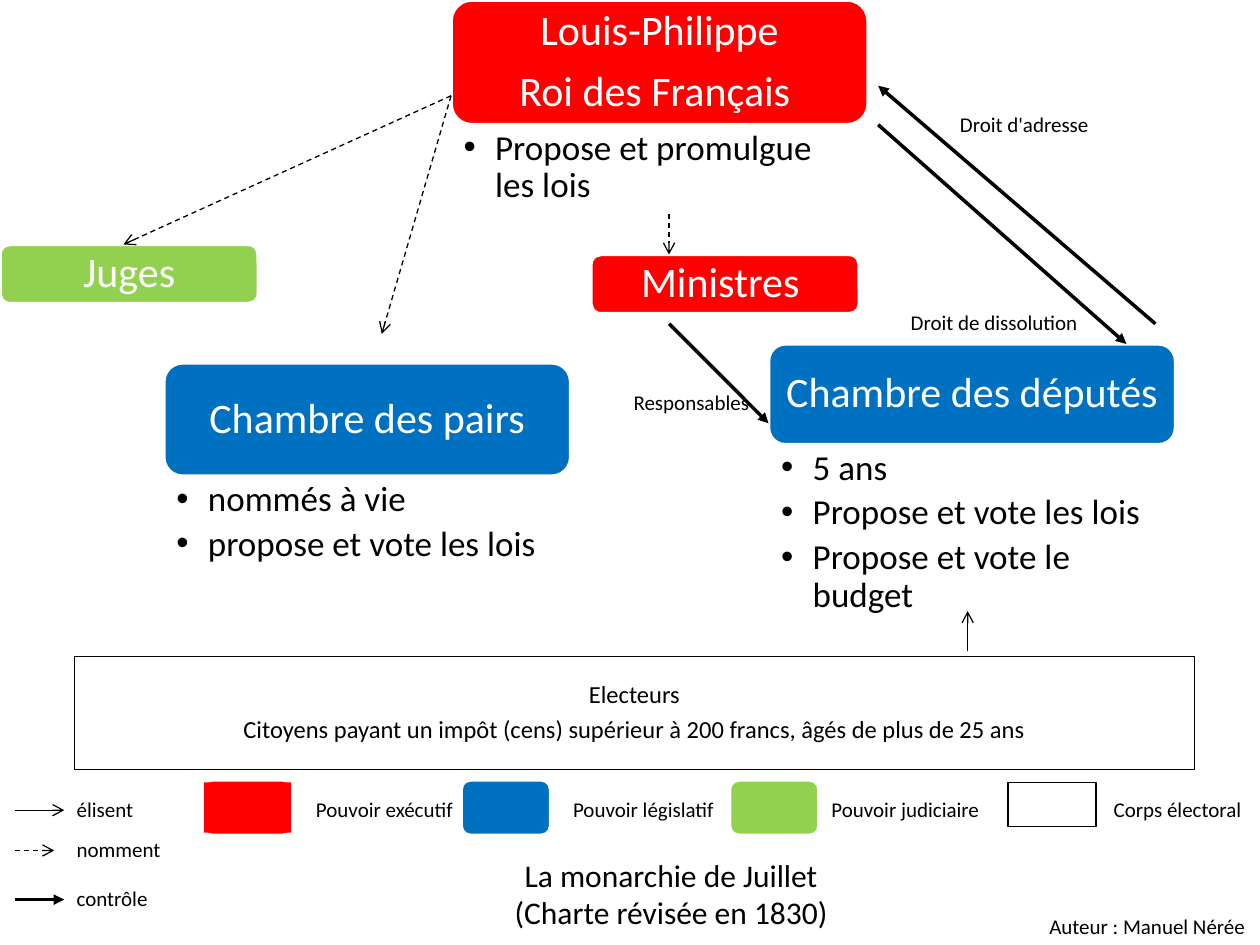
from lxml.etree import SubElement
from pptx import Presentation
from pptx.dml.color import RGBColor
from pptx.enum.dml import MSO_LINE
from pptx.enum.shapes import MSO_CONNECTOR, MSO_SHAPE
from pptx.enum.text import MSO_ANCHOR as Anchor, MSO_AUTO_SIZE as AutoSize, PP_ALIGN as Align
from pptx.oxml.ns import qn
from pptx.util import Emu, Pt

EMU_PER_PX = 9144
FONT = "Calibri"
RED = RGBColor(0xFF, 0x00, 0x00)
BLUE = RGBColor(0x00, 0x70, 0xC0)
GREEN = RGBColor(0x92, 0xD0, 0x50)
BLACK = RGBColor(0x00, 0x00, 0x00)
WHITE = RGBColor(0xFF, 0xFF, 0xFF)


def px(length):
    """Turn px, at 100 to the inch, into EMU."""
    return Emu(length * EMU_PER_PX)


def write(shape, lines, size, color, align, anchor, margins, spacing=1.0, after=0):
    """Fill a shape with one formatted paragraph per line and return the paragraphs."""
    frame = shape.text_frame
    frame.auto_size = AutoSize.NONE
    frame.word_wrap = True
    frame.vertical_anchor = anchor
    (frame.margin_left, frame.margin_top,
     frame.margin_right, frame.margin_bottom) = map(px, margins)
    for index, line in enumerate(lines):
        paragraph = frame.add_paragraph() if index else frame.paragraphs[0]
        paragraph.alignment = align
        paragraph.line_spacing = spacing
        paragraph.space_before = Pt(0)
        paragraph.space_after = Pt(after)
        run = paragraph.add_run()
        run.text = line
        run.font.name = FONT
        run.font.size = Pt(size)
        run.font.bold = False
        run.font.color.rgb = color
    return frame.paragraphs


def place(shape, box):
    """Move and size a placeholder to a box."""
    shape.left, shape.top, shape.width, shape.height = map(px, box)


def add_box(slide, box, fill=None, line=None, width=2, kind=MSO_SHAPE.ROUNDED_RECTANGLE):
    """Add a flat shape with optional fill and outline."""
    shape = slide.shapes.add_shape(kind, *map(px, box))
    shape.shadow.inherit = False
    if fill is None:
        shape.fill.background()
    else:
        shape.fill.solid()
        shape.fill.fore_color.rgb = fill
    if line is None:
        shape.line.fill.background()
    else:
        shape.line.color.rgb = line
        shape.line.width = Pt(width)
    return shape


def add_label(slide, left, top, width, text):
    """Add a one-line caption."""
    label = slide.shapes.add_textbox(*map(px, (left, top, width, 30)))
    write(label, [text], 12, BLACK, Align.LEFT, Anchor.TOP, (10, 5, 10, 5))
    label.text_frame.word_wrap = False


def add_arrow(slide, start, end, head="arrow", width=0.75, dashed=False):
    """Draw a straight arrow from start to end."""
    arrow = slide.shapes.add_connector(MSO_CONNECTOR.STRAIGHT, *map(px, start + end))
    arrow.line.color.rgb = BLACK
    arrow.line.width = Pt(width)
    if dashed:
        arrow.line.dash_style = MSO_LINE.DASH
    SubElement(arrow.line._get_or_add_ln(), qn("a:tailEnd"), type=head)
    SubElement(arrow._element.spPr, qn("a:effectLst"))


def elects(slide, start, end):
    """Draw the thin solid arrow of an election."""
    add_arrow(slide, start, end)


def appoints(slide, start, end):
    """Draw the dashed arrow of an appointment."""
    add_arrow(slide, start, end, dashed=True)


def controls(slide, start, end):
    """Draw the thick arrow of a control."""
    add_arrow(slide, start, end, "triangle", 2)


def add_power(slide, box, color, names):
    """Add the coloured box of an institution."""
    shape = add_box(slide, box, color, WHITE)
    write(shape, names, 24, WHITE, Align.CENTER, Anchor.MIDDLE, (10,) * 4, 0.9, 8.4)


def add_duties(placeholder, power_box, height, items):
    """Put a bulleted list right below the box of an institution."""
    left, top, width, power_height = power_box
    place(placeholder, (left, top + power_height + 1, width, height))
    for paragraph in write(placeholder, items, 20, BLACK, Align.LEFT, Anchor.TOP,
                           (10, 3, 16, 3), 0.9, 4):
        properties = paragraph._p.get_or_add_pPr()
        properties.set("marL", str(px(25)))
        properties.set("indent", str(px(-25)))
        SubElement(properties, qn("a:buFont"), typeface="Arial")
        SubElement(properties, qn("a:buChar"), char="•")


def add_electors(slide, box):
    """Add the framed box of the electorate."""
    frame = add_box(slide, box, line=BLACK, width=0.75, kind=MSO_SHAPE.RECTANGLE)
    lines = ["Electeurs",
             "Citoyens payant un impôt (cens) supérieur à 200 francs, âgés de plus de 25 ans"]
    write(frame, lines, 14, BLACK, Align.CENTER, Anchor.MIDDLE, (10,) * 4, 0.9, 4.9)


def add_arrow_legend(slide, left, top):
    """Explain the three kinds of arrow."""
    entries = [(elects, 0, 39, "élisent", 69),
               (appoints, 32, 31, "nomment", 94),
               (controls, 71, 39, "contrôle", 80)]
    for draw, offset, length, text, width in entries:
        y = top + offset
        draw(slide, (left, y), (left + length, y))
        add_label(slide, left + 39, y - 16, width, text)


def add_color_legend(slide, left, top):
    """Explain the colours of the powers and the frame of the electorate."""
    entries = [(0, RED, 80, 133, "Pouvoir exécutif"),
               (205, BLUE, 284, 140, "Pouvoir législatif"),
               (418, GREEN, 489, 141, "Pouvoir judiciaire")]
    for x, color, text_x, width, text in entries:
        add_box(slide, (left + x, top, 71, 44), color, WHITE)
        add_label(slide, left + text_x, top + 8, width, text)
    add_box(slide, (left + 1, top + 2, 69, 40), RED, kind=MSO_SHAPE.RECTANGLE)
    add_box(slide, (left + 639, top + 2, 70, 35), line=BLACK, width=0.75,
            kind=MSO_SHAPE.RECTANGLE)
    add_label(slide, left + 713, top + 8, 125, "Corps électoral")


def add_relations(slide):
    """Draw the arrows between institutions and their captions."""
    appoints(slide, (358, 76), (98, 194))
    appoints(slide, (358, 76), (303, 265))
    appoints(slide, (531, 170), (531, 202))
    controls(slide, (531, 257), (610, 336))
    controls(slide, (917, 257), (697, 68))
    controls(slide, (697, 99), (894, 273))
    elects(slide, (768, 517), (768, 485))
    add_label(slide, 493, 304, 119, "Responsables")
    add_label(slide, 713, 241, 157, "Droit de dissolution")
    add_label(slide, 752, 84, 126, "Droit d'adresse")


def main():
    """Build and save the slide."""
    presentation = Presentation()
    presentation.slide_width, presentation.slide_height = px(1000), px(750)
    slide = presentation.slides.add_slide(presentation.slide_layouts[4])
    title, king_list, peers_list, spare, deputies_list = slide.placeholders
    spare._element.getparent().remove(spare._element)

    place(title, (319, 674, 433, 70))
    write(title, ["La monarchie de Juillet ", "(Charte révisée en 1830) "], 18, BLACK,
          Align.CENTER, Anchor.TOP, (10, 5, 10, 5))

    king, peers, deputies = (358, 0, 331, 99), (130, 288, 323, 90), (610, 273, 323, 80)
    add_power(slide, king, RED, ["Louis-Philippe", "Roi des Français "])
    add_power(slide, peers, BLUE, ["Chambre des pairs"])
    add_power(slide, deputies, BLUE, ["Chambre des députés"])
    add_power(slide, (0, 194, 205, 47), GREEN, ["Juges"])
    add_power(slide, (469, 202, 213, 47), RED, ["Ministres "])
    add_duties(king_list, king, 72, ["Propose et promulgue les lois"])
    add_duties(peers_list, peers, 96, ["nommés à vie", "propose et vote les lois"])
    add_duties(deputies_list, deputies, 132,
               ["5 ans", "Propose et vote les lois", "Propose et vote le budget"])

    add_electors(slide, (59, 521, 889, 90))
    add_relations(slide)
    add_arrow_legend(slide, 12, 643)
    add_color_legend(slide, 161, 619)
    add_label(slide, 823, 720, 177, "Auteur : Manuel Nérée")
    presentation.save("out.pptx")


if __name__ == "__main__":
    main()
